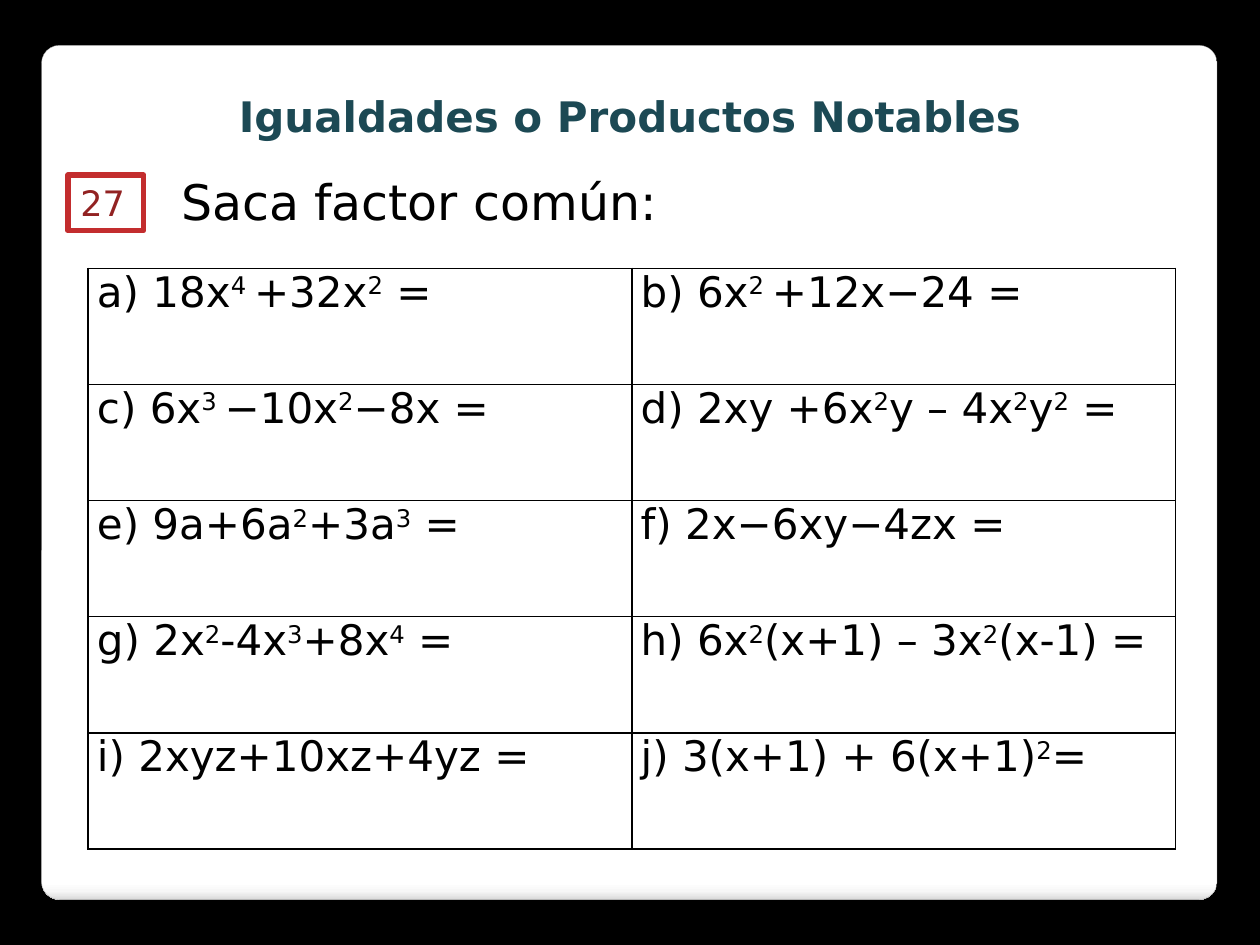
from lxml.etree import SubElement
from pptx import Presentation
from pptx.dml.color import RGBColor
from pptx.enum.shapes import MSO_SHAPE
from pptx.enum.text import MSO_ANCHOR, PP_ALIGN
from pptx.oxml.ns import qn
from pptx.util import Inches, Pt

FONT = "DejaVu Sans"
EXERCISES = [
    ("a) 18x^4 ^+32x^2^ =", "b) 6x^2 ^+12x−24 ="),
    ("c) 6x^3 ^−10x^2^−8x =", "d) 2xy +6x^2^y – 4x^2^y^2^ ="),
    ("e) 9a+6a^2^+3a^3^ =", "f) 2x−6xy−4zx ="),
    ("g) 2x^2^-4x^3^+8x^4^ =", "h) 6x^2^(x+1) – 3x^2^(x-1) ="),
    ("i) 2xyz+10xz+4yz =", "j) 3(x+1) + 6(x+1)^2^="),
]


def paint(color_format, color):
    color_format.rgb = RGBColor.from_string(color)


def paint_fill(fill, color):
    fill.solid()
    paint(fill.fore_color, color)


def place(shape, box):
    shape.left, shape.top, shape.width, shape.height = map(Inches, box)


def style(paragraph, size, color, bold=False, align=PP_ALIGN.LEFT):
    paragraph.alignment = align
    paragraph.font.name = FONT
    paragraph.font.size = Pt(size)
    paragraph.font.bold = bold
    paint(paragraph.font.color, color)


def write(frame, text, *args, **kwargs):
    frame.word_wrap = True
    frame.vertical_anchor = MSO_ANCHOR.TOP
    frame.text = text
    style(frame.paragraphs[0], *args, **kwargs)


def add_card(slide, box):
    card = slide.shapes.add_shape(MSO_SHAPE.ROUNDED_RECTANGLE, *map(Inches, box))
    card.adjustments[0] = 0.021
    card.shadow.inherit = False
    paint_fill(card.line.fill, "A4A4A4")
    card.line.width = Pt(0.16)
    card.fill.gradient()
    card.fill.gradient_angle = 270
    stops = card._element.spPr.find(qn("a:gradFill")).find(qn("a:gsLst"))
    for stop in list(stops):
        stops.remove(stop)
    for percent, color in [(0, "FFFFFF"), (98, "FFFFFF"), (99, "F7F7F7"), (100, "DADADA")]:
        stop = SubElement(stops, qn("a:gs"), pos=str(percent * 1000))
        SubElement(stop, qn("a:srgbClr"), val=color)
    slide.shapes._spTree.insert(2, card._element)


def add_title(slide, box):
    title = slide.shapes.title
    place(title, box)
    write(title.text_frame, "Igualdades o Productos Notables", 24, "1C4954",
          bold=True, align=PP_ALIGN.CENTER)


def add_number(slide, box):
    number = slide.shapes.add_shape(MSO_SHAPE.RECTANGLE, *map(Inches, box))
    number.shadow.inherit = False
    paint_fill(number.fill, "FFFFFF")
    paint_fill(number.line.fill, "C32D2E")
    number.line.width = Pt(3.35)
    SubElement(number.line._get_or_add_ln(), qn("a:round"))
    write(number.text_frame, "27", 20, "922222")


def add_instruction(slide, box):
    instruction = slide.shapes.add_textbox(*map(Inches, box))
    write(instruction.text_frame, "Saca factor común:", 28, "000000")


def add_borders(cell):
    properties = cell._tc.get_or_add_tcPr()
    for side in ("a:lnL", "a:lnR", "a:lnT", "a:lnB"):
        border = SubElement(properties, qn(side), w=str(Pt(1)))
        SubElement(SubElement(border, qn("a:solidFill")), qn("a:srgbClr"), val="000000")


def fill_cell(cell, expression):
    add_borders(cell)
    paint_fill(cell.fill, "FFFFFF")
    cell.margin_left = cell.margin_right = Inches(0.07)
    cell.margin_top = cell.margin_bottom = 0
    paragraph = cell.text_frame.paragraphs[0]
    style(paragraph, 24, "000000")
    paragraph.space_before = paragraph.space_after = Pt(6)
    for index, part in enumerate(expression.split("^")):
        run = paragraph.add_run()
        run.text = part
        if index % 2:
            run._r.get_or_add_rPr().set("baseline", "30000")


def add_exercises(slide, box):
    table = slide.shapes.add_table(len(EXERCISES), 2, *map(Inches, box)).table
    for row, expressions in enumerate(EXERCISES):
        for column, expression in enumerate(expressions):
            fill_cell(table.cell(row, column), expression)


def main():
    presentation = Presentation()
    presentation.slide_width = Inches(10)
    presentation.slide_height = Inches(7.5)
    slide = presentation.slides.add_slide(presentation.slide_layouts[5])
    paint_fill(slide.background.fill, "000000")
    add_card(slide, (0.33, 0.36, 9.33, 6.78))
    add_title(slide, (0.39, 0.67, 9.22, 0.5))
    add_number(slide, (0.54, 1.39, 0.6, 0.44))
    add_instruction(slide, (1.34, 1.31, 8.27, 0.57))
    add_exercises(slide, (0.7, 2.13, 8.63, 4.61))
    presentation.save("out.pptx")


if __name__ == "__main__":
    main()
